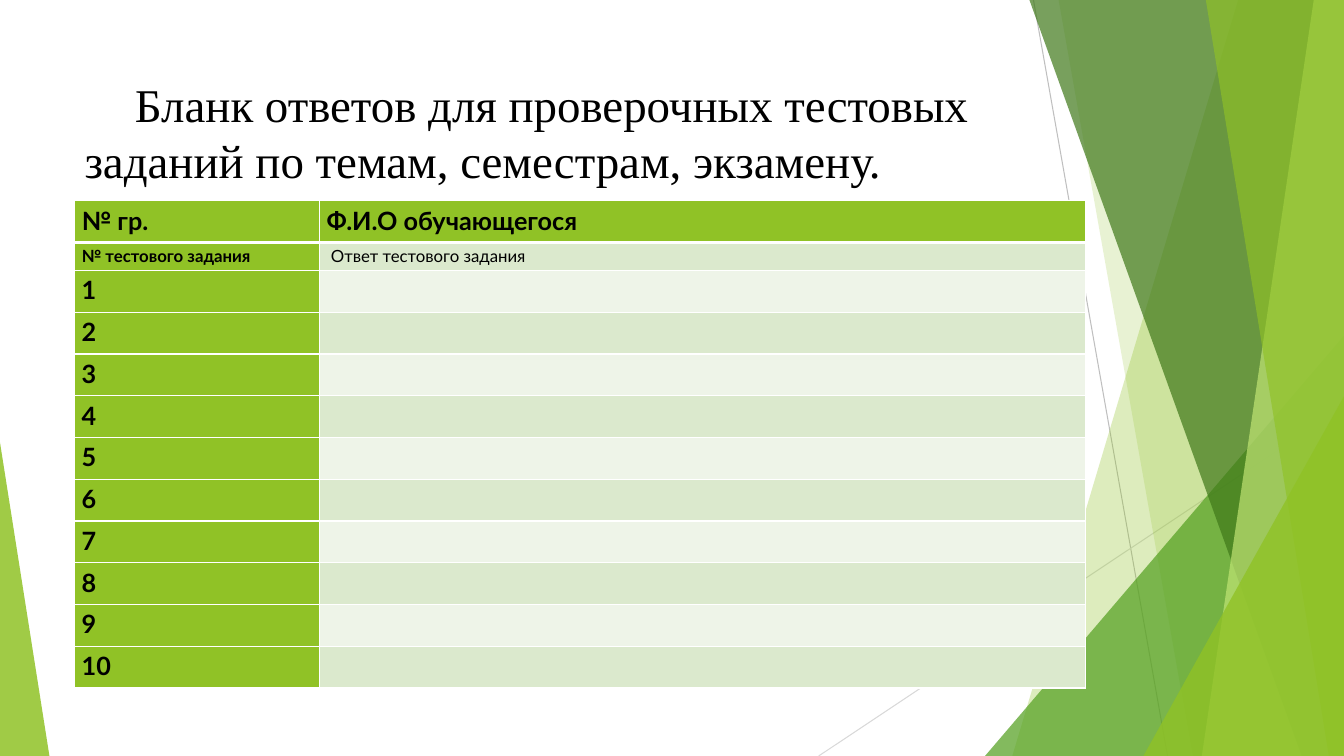
from lxml.etree import SubElement
from pptx import Presentation
from pptx.dml.color import RGBColor
from pptx.enum.shapes import MSO_CONNECTOR, MSO_SHAPE
from pptx.enum.text import MSO_ANCHOR, PP_ALIGN
from pptx.oxml.ns import qn
from pptx.util import Inches, Pt

WHITE = RGBColor(0xFF, 0xFF, 0xFF)
BLACK = RGBColor(0, 0, 0)
GREY = RGBColor(0xBF, 0xBF, 0xBF)
PALE_GREY = RGBColor(0xD9, 0xD9, 0xD9)
LIME = RGBColor(0x90, 0xC2, 0x26)
PALE_LIME = RGBColor(0xC0, 0xE4, 0x74)
GREEN = RGBColor(0x54, 0xA0, 0x21)
DARK_GREEN = RGBColor(0x3F, 0x78, 0x19)
BAND_DARK = RGBColor(0xDB, 0xE9, 0xCD)
BAND_LIGHT = RGBColor(0xEE, 0xF4, 0xE8)

SLIDE_WIDTH, SLIDE_HEIGHT = 13.33, 7.5
QUESTION_COUNT = 10
LABEL_SIZE, SMALL_SIZE = 18, 12


def paint(shape, color, opacity):
    """Give a shape a translucent fill without line or shadow."""
    shape.shadow.inherit = False
    shape.line.fill.background()
    shape.fill.solid()
    shape.fill.fore_color.rgb = color
    tint = shape.fill._xPr.find(qn("a:solidFill"))[0]
    SubElement(tint, qn("a:alpha"), val=str(opacity * 1000))


def add_ray(page, start, end, color):
    """Draw a thin straight line between two points."""
    points = [Inches(value) for value in (*start, *end)]
    ray = page.shapes.add_connector(MSO_CONNECTOR.STRAIGHT, *points)
    ray.line.color.rgb = color
    ray.line.width = Pt(0.75)
    SubElement(ray._element.spPr, qn("a:effectLst"))


def add_triangle(page, left, top, width, height, apex, color, opacity):
    """Draw a right-angled triangle whose apex is at 0 (left) or 1 (right)."""
    box = [Inches(value) for value in (left, top, width, height)]
    triangle = page.shapes.add_shape(MSO_SHAPE.ISOSCELES_TRIANGLE, *box)
    triangle.adjustments[0] = apex
    paint(triangle, color, opacity)


def add_facets(page, left, top, width, height):
    """Draw the green facets along the right side of the given box."""
    right, bottom = left + width, top + height

    def panel(top_inset, bottom_inset, color, opacity):
        """Draw a slanted panel that reaches the right edge."""
        corners = [(right - top_inset, top), (right, top),
                   (right, bottom), (right - bottom_inset, bottom)]
        points = [(Inches(x), Inches(y)) for x, y in corners]
        builder = page.shapes.build_freeform(*points[0])
        builder.add_line_segments(points[1:], close=True)
        paint(builder.convert_to_shape(), color, opacity)

    def corner(span, rise, color, opacity):
        """Draw a triangle in the lower right corner."""
        add_triangle(page, right - span, bottom - rise, span, rise, 1, color, opacity)

    add_ray(page, (right - 3.08, top), (right - 1.75, bottom), GREY)
    add_ray(page, (right, bottom - 3.47), (right - 5.21, bottom), PALE_GREY)
    panel(1.05, 3.29, LIME, 30)
    panel(2.83, 1.5, LIME, 20)
    corner(3.56, 4.17, GREEN, 72)
    panel(3.12, 0.42, DARK_GREEN, 70)
    panel(0.3, 1.41, PALE_LIME, 70)
    panel(1.37, 0.15, LIME, 65)
    corner(1.99, 3.57, LIME, 80)


def add_title(page, left, top, width, height):
    """Write the heading with an indented first line."""
    box = page.shapes.add_textbox(*[Inches(value) for value in (left, top, width, height)])
    frame = box.text_frame
    frame.word_wrap = True
    frame.vertical_anchor = MSO_ANCHOR.TOP
    frame.text = "Бланк ответов для проверочных тестовых заданий по темам, семестрам, экзамену."
    para = frame.paragraphs[0]
    para._p.get_or_add_pPr().set("indent", str(Inches(0.5)))
    span = para.runs[0]
    span.font.name = "Times New Roman"
    span.font.size = Pt(33.5)
    span.font.color.rgb = BLACK


def set_borders(cell, top_width, bottom_width):
    """Give a cell white borders."""
    properties = cell._tc.get_or_add_tcPr()
    widths = {"lnL": 1, "lnR": 1, "lnT": top_width, "lnB": bottom_width}
    for side, width in widths.items():
        line = SubElement(properties, qn(f"a:{side}"), w=str(Pt(width)))
        fill = SubElement(line, qn("a:solidFill"))
        SubElement(fill, qn("a:srgbClr"), val=str(WHITE))


def fill_cell(cell, text, size, bold, color):
    """Set the text, margins and fill of a cell."""
    cell.margin_left = cell.margin_right = Inches(0.07)
    cell.margin_top = cell.margin_bottom = 0
    cell.fill.solid()
    cell.fill.fore_color.rgb = color
    cell.text_frame.text = text
    para = cell.text_frame.paragraphs[0]
    para.alignment = PP_ALIGN.JUSTIFY
    para.line_spacing = 1.15
    para.space_after = Pt(10)
    para.font.size = Pt(size)
    for span in para.runs:
        span.font.name = "Lato"
        span.font.size = Pt(size)
        span.font.bold = bold
        span.font.color.rgb = BLACK


def add_answer_table(page, left, top, width, height):
    """Build the answer form with one row for each question."""
    rows = [("№ гр.", "Ф.И.О обучающегося"),
            ("№ тестового задания", " Ответ тестового задания")]
    rows += [(str(number), "") for number in range(1, QUESTION_COUNT + 1)]
    box = [Inches(value) for value in (left, top, width, height)]
    table = page.shapes.add_table(len(rows), 2, *box).table
    label_width, small_height = 2.43, 0.28
    table.columns[0].width = Inches(label_width)
    table.columns[1].width = Inches(width - label_width)
    row_height = (height - small_height) / (len(rows) - 1)
    for index, texts in enumerate(rows):
        table.rows[index].height = Inches(small_height if index == 1 else row_height)
        size = SMALL_SIZE if index == 1 else LABEL_SIZE
        band = LIME if index == 0 else BAND_DARK if index % 2 else BAND_LIGHT
        for column, text in enumerate(texts):
            cell = table.cell(index, column)
            set_borders(cell, 3 if index == 1 else 1, 3 if index == 0 else 1)
            bold = index == 0 or column == 0
            fill_cell(cell, text, size, bold, band if column else LIME)


def main():
    """Build and save the slide."""
    deck = Presentation()
    deck.slide_width, deck.slide_height = Inches(SLIDE_WIDTH), Inches(SLIDE_HEIGHT)
    page = deck.slides.add_slide(deck.slide_layouts[6])
    add_facets(page, 0, 0, SLIDE_WIDTH, SLIDE_HEIGHT)
    add_triangle(page, 0, 4.39, 0.49, 3.11, 0, LIME, 85)
    add_title(page, 0.74, 0.7, 9.4, 1.2)
    add_answer_table(page, 0.74, 1.99, 10.03, 4.84)
    deck.save("out.pptx")


if __name__ == "__main__":
    main()
